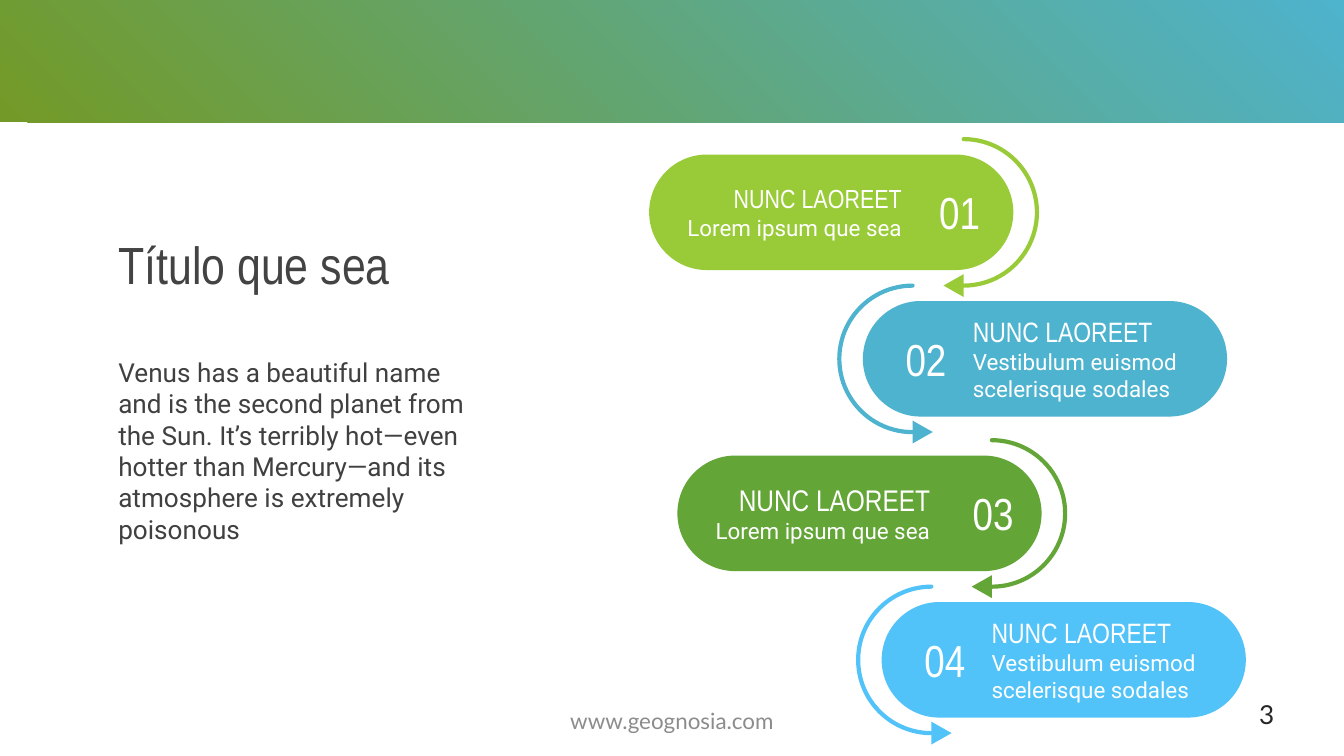
from lxml.etree import SubElement
from pptx import Presentation
from pptx.dml.color import RGBColor
from pptx.enum.shapes import MSO_SHAPE as Shape
from pptx.enum.text import MSO_ANCHOR as Anchor, MSO_AUTO_SIZE as AutoSize, PP_ALIGN as Align
from pptx.oxml.ns import qn
from pptx.util import Inches, Pt

LIME = RGBColor(0x99, 0xCB, 0x38)
TEAL = RGBColor(0x4E, 0xB3, 0xCF)
GREEN = RGBColor(0x63, 0xA5, 0x37)
SKY = RGBColor(0x51, 0xC3, 0xF9)
OLIVE = RGBColor(0x73, 0x9A, 0x28)
WHITE = RGBColor(0xFF, 0xFF, 0xFF)
TITLE_GREY = RGBColor(0x43, 0x43, 0x43)
BODY_GREY = RGBColor(0x40, 0x40, 0x40)
FOOTER_GREY = RGBColor(0x8C, 0x8C, 0x8C)
NUMBER_GREY = RGBColor(0x26, 0x26, 0x26)
NARROW, ROBOTO, LATO = "Arial Narrow", "Roboto", "Lato"

SLIDE_WIDTH = 10
SLIDE_HEIGHT = SLIDE_WIDTH * 9 / 16

TITLE = "Título que sea"
BODY = (
    "Venus has a beautiful name and is the second planet from the Sun. "
    "It’s terribly hot—even hotter than Mercury—and its atmosphere is "
    "extremely poisonous"
)
WEBSITE = "www.geognosia.com"
PAGE_NUMBER = "3"

HEADING = "NUNC LAOREET"
SHORT_DETAIL = "Lorem ipsum que sea"
LONG_DETAIL = "Vestibulum euismod scelerisque sodales"
# number, detail, heading size, colour, pill left, pill top, number width
STEPS = [
    ("01", SHORT_DETAIL, 14, LIME, 4.83, 1.15, 0.52),
    ("02", LONG_DETAIL, 15, TEAL, 6.42, 2.24, 0.58),
    ("03", SHORT_DETAIL, 16, GREEN, 5.04, 3.39, 0.56),
    ("04", LONG_DETAIL, 15, SKY, 6.56, 4.48, 0.58),
]
PILL_WIDTH, PILL_HEIGHT = 2.71, 0.86
ARC_SIZE = 1.09
HEAD_WIDTH, HEAD_HEIGHT = 0.17, 0.15
# Offsets from the pill's left edge; arc angles in units of 100000/60000 degrees
RIGHT_SIDE = dict(text=0.14, number=2.04, arc_centre=2.34, head=2.18,
                  angles=(162, 54), rotation=270, align=Align.RIGHT)
LEFT_SIDE = dict(text=0.72, number=0.14, arc_centre=0.37, head=0.36,
                 angles=(54, 162), rotation=90, align=Align.LEFT)


def fill_text(box, lines, align=Align.LEFT, anchor=Anchor.MIDDLE, inset=0.1):
    """Write lines of (text, size, font, colour), one paragraph each."""
    frame = box.text_frame
    frame.text = "\n".join(line[0] for line in lines)
    frame.word_wrap = True
    frame.auto_size = AutoSize.NONE
    frame.vertical_anchor = anchor
    frame.margin_left = frame.margin_right = Inches(0.1)
    frame.margin_top = frame.margin_bottom = Inches(inset)
    for paragraph, (_, size, face, color) in zip(frame.paragraphs, lines):
        paragraph.alignment = align
        paragraph.space_before = Pt(0)
        font = paragraph.runs[0].font
        font.size, font.name = Pt(size), face
        font.color.rgb = color


def add_text(slide, place, lines, **options):
    box = slide.shapes.add_textbox(*map(Inches, place))
    fill_text(box, lines, **options)


def move(placeholder, left, top, width, height):
    placeholder.left, placeholder.top = Inches(left), Inches(top)
    placeholder.width, placeholder.height = Inches(width), Inches(height)


def add_filled(slide, kind, place, color):
    shape = slide.shapes.add_shape(kind, *map(Inches, place))
    shape.shadow.inherit = False
    shape.fill.solid()
    shape.fill.fore_color.rgb = color
    shape.line.fill.background()
    return shape


def add_arc(slide, centre_x, centre_y, color, angles):
    arc = slide.shapes.add_shape(
        Shape.ARC, Inches(centre_x - ARC_SIZE / 2), Inches(centre_y - ARC_SIZE / 2),
        Inches(ARC_SIZE), Inches(ARC_SIZE))
    arc.adjustments[0], arc.adjustments[1] = angles
    arc.shadow.inherit = False
    arc.fill.background()
    arc.line.color.rgb = color
    arc.line.width = Pt(2.25)
    arc.line._get_or_add_ln().set("cap", "rnd")


def add_step(slide, step, side):
    number, detail, heading_size, color, left, top, number_width = step
    pill = add_filled(slide, Shape.ROUNDED_RECTANGLE,
                      (left, top, PILL_WIDTH, PILL_HEIGHT), color)
    pill.adjustments[0] = 0.5
    middle = top + PILL_HEIGHT / 2
    add_text(slide, (left + side["text"], middle - 0.3, 1.84, 0.59),
             [(HEADING, heading_size, NARROW, WHITE), (detail, 12, ROBOTO, WHITE)],
             align=side["align"])
    add_text(slide, (left + side["number"], middle - 0.24, number_width, 0.47),
             [(number, 24, NARROW, WHITE)], align=Align.RIGHT)
    add_arc(slide, left + side["arc_centre"], middle, color, side["angles"])
    head_top = middle + ARC_SIZE / 2 - HEAD_HEIGHT / 2
    head = add_filled(slide, Shape.ISOSCELES_TRIANGLE,
                      (left + side["head"], head_top, HEAD_WIDTH, HEAD_HEIGHT), color)
    head.rotation = side["rotation"]


def main():
    prs = Presentation()
    prs.slide_width, prs.slide_height = Inches(SLIDE_WIDTH), Inches(SLIDE_HEIGHT)
    slide = prs.slides.add_slide(prs.slide_layouts[1])

    band = add_filled(slide, Shape.RECTANGLE, (-0.04, -0.05, 10.08, 0.96), OLIVE)
    band.fill.gradient()
    band.fill.gradient_angle = 45
    for stop, position, color in zip(band.fill.gradient_stops, (0.01, 1), (OLIVE, TEAL)):
        stop.position = position
        stop.color.rgb = color

    for index, step in enumerate(STEPS):
        add_step(slide, step, LEFT_SIDE if index % 2 else RIGHT_SIDE)

    title, body = slide.placeholders
    move(title, 0.78, 1.5, 2.72, 0.93)
    fill_text(title, [(TITLE, 28, NARROW, TITLE_GREY)])
    move(body, 0.78, 2.55, 2.88, 1.58)
    fill_text(body, [(BODY, 14, ROBOTO, BODY_GREY)], anchor=Anchor.TOP)
    properties = body.text_frame.paragraphs[0]._p.get_or_add_pPr()
    properties.set("marL", "0")
    properties.set("indent", "0")
    SubElement(properties, qn("a:buNone"))

    add_text(slide, (3.31, 5.21, 3.38, 0.3), [(WEBSITE, 12, LATO, FOOTER_GREY)],
             align=Align.CENTER, inset=0.05)
    add_text(slide, (9.27, 5.1, 0.6, 0.43), [(PAGE_NUMBER, 14, LATO, NUMBER_GREY)])
    prs.save("out.pptx")


if __name__ == "__main__":
    main()
